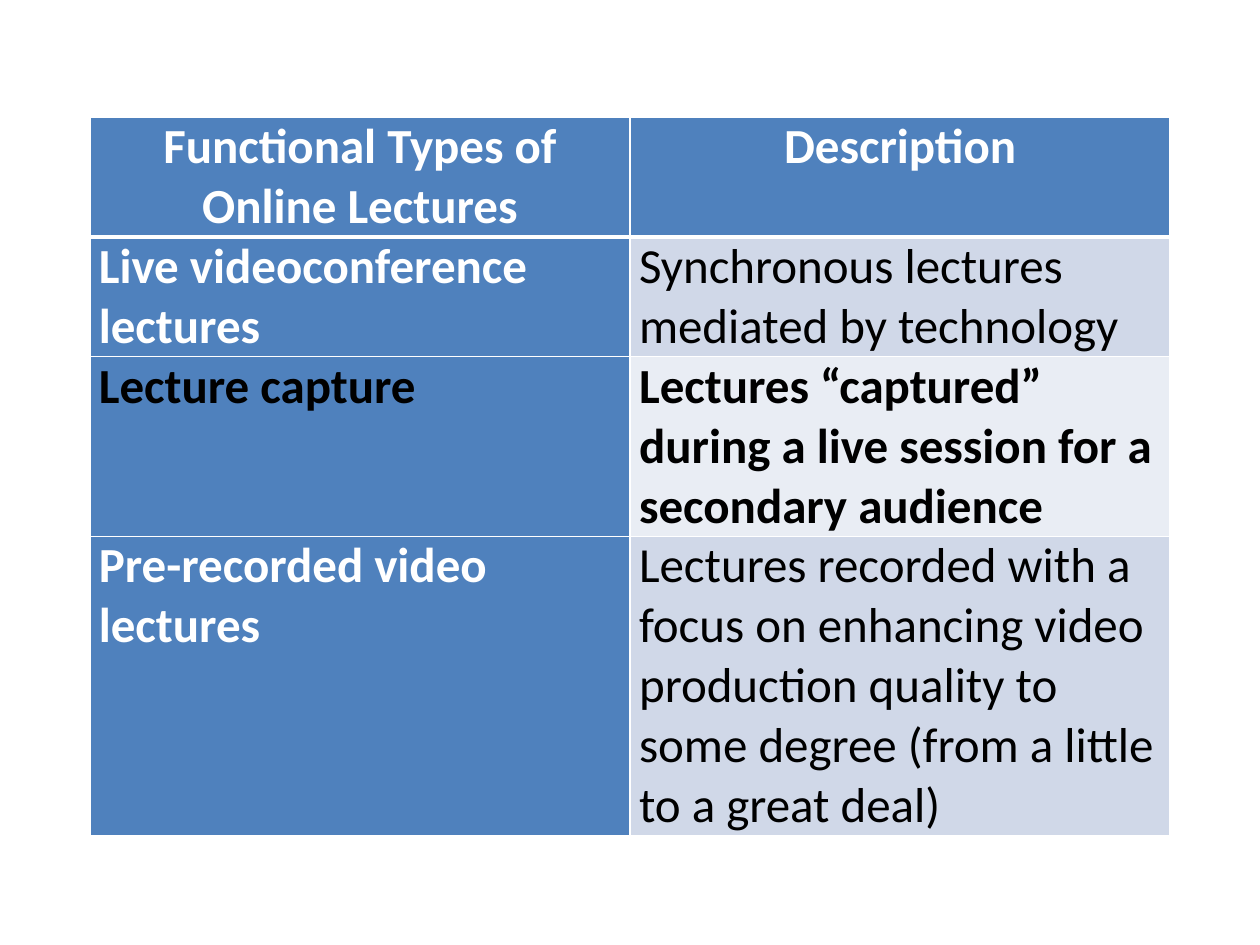
from lxml.etree import SubElement
from pptx import Presentation
from pptx.dml.color import RGBColor as RGB
from pptx.enum.text import PP_ALIGN as Align
from pptx.oxml.ns import qn
from pptx.util import Pt

COLORS = {"white": "FFFFFF", "black": "000000", "blue": "4F81BD",
          "band": "D0D8E8", "pale": "E9EDF4"}

# Content: type, description, lines of text, highlighted
HEADER = ("Functional Types of Online Lectures", "Description", 2, False)
LECTURES = [
    ("Live videoconference lectures",
     "Synchronous lectures mediated by technology", 2, False),
    ("Lecture capture",
     "Lectures “captured” during a live session for a secondary audience", 3, True),
    ("Pre-recorded video lectures",
     "Lectures recorded with a focus on enhancing video production quality "
     "to some degree (from a little to a great deal)", 5, False),
]
ROWS = [HEADER] + LECTURES

LEFT, TOP, COL_WIDTH, LINE_HEIGHT = 51.3, 66.9, 308.7, 33.6
MARGINS = {"margin_left": 5.2, "margin_right": 5.2, "margin_top": 0, "margin_bottom": 0}


def set_borders(cell, bottom):
    tc_pr = cell._tc.get_or_add_tcPr()
    for side, width in (("L", 1), ("R", 1), ("T", 1), ("B", bottom)):
        ln = SubElement(tc_pr, qn(f"a:ln{side}"), w=str(Pt(width)))
        fill = SubElement(ln, qn("a:solidFill"))
        SubElement(fill, qn("a:srgbClr"), val=COLORS["white"])


def fill_cell(cell, text, fill, color, bold, align, bottom):
    set_borders(cell, bottom)
    cell.fill.solid()
    cell.fill.fore_color.rgb = RGB.from_string(COLORS[fill])
    for name, value in MARGINS.items():
        setattr(cell, name, Pt(value))
    p = cell.text_frame.paragraphs[0]
    p.alignment = align
    r = p.add_run()
    r.text = text
    for name, value in {"name": "Calibri", "size": Pt(28), "bold": bold}.items():
        setattr(r.font, name, value)
    r.font.color.rgb = RGB.from_string(COLORS[color])


prs = Presentation()
prs.slide_width, prs.slide_height = Pt(720), Pt(540)
s = prs.slides.add_slide(prs.slide_layouts[6])

# Table, with row heights set by the number of text lines
height = LINE_HEIGHT * sum(row[2] for row in ROWS)
table = s.shapes.add_table(len(ROWS), 2, Pt(LEFT), Pt(TOP),
                           Pt(2 * COL_WIDTH), Pt(height)).table
for col in table.columns:
    col.width = Pt(COL_WIDTH)

for i, (kind, description, lines, highlighted) in enumerate(ROWS):
    table.rows[i].height = Pt(LINE_HEIGHT * lines)
    header = i == 0
    align = Align.CENTER if header else Align.LEFT
    bottom = 3 if header else 1
    # Lecture type
    fill_cell(table.cell(i, 0), kind, "blue",
              "black" if highlighted else "white", True, align, bottom)
    # Description, in alternating bands below the header
    fill = "blue" if header else ("band" if i % 2 else "pale")
    fill_cell(table.cell(i, 1), description, fill,
              "white" if header else "black", header or highlighted, align, bottom)

# The heavy rule under the header is also the top edge of the next row
for cell in table.rows[1].cells:
    cell._tc.tcPr.find(qn("a:lnT")).set("w", str(Pt(3)))

prs.save("out.pptx")
